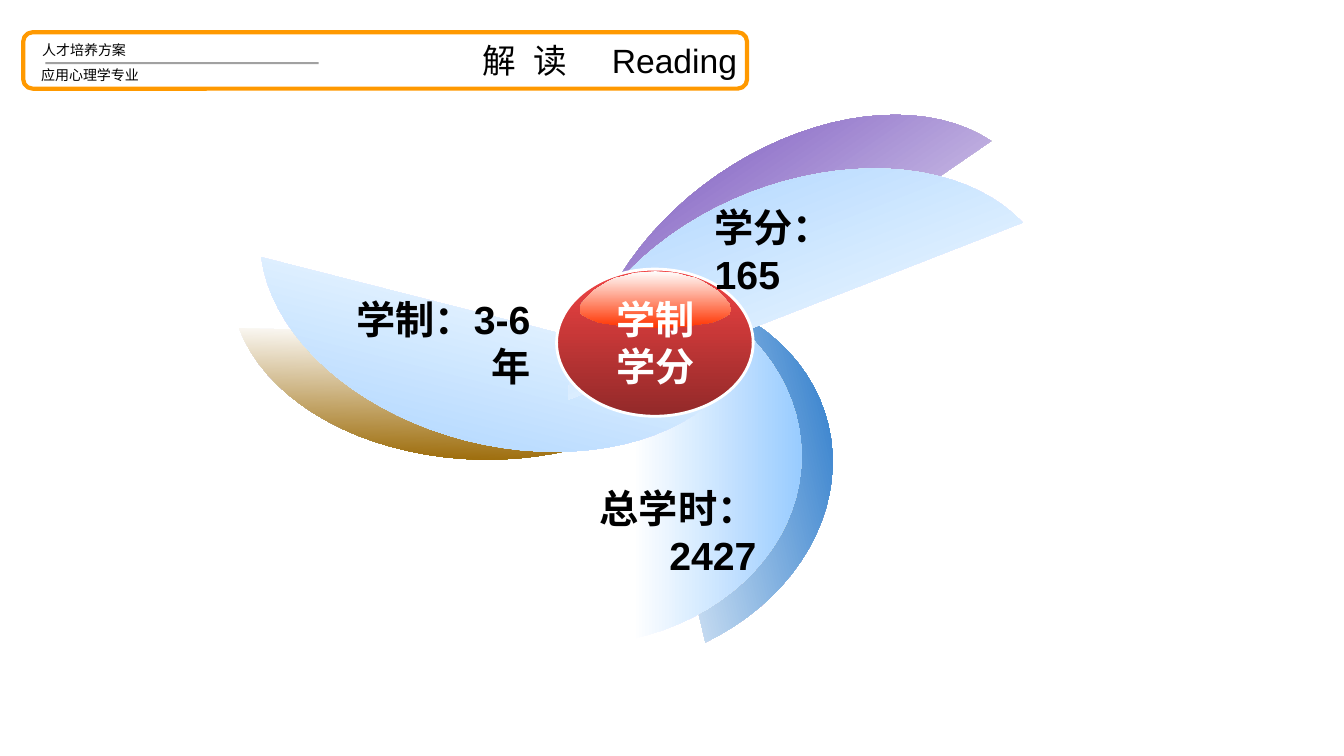
from math import acos, cos, sin
from lxml.etree import SubElement
from pptx import Presentation
from pptx.dml.color import RGBColor
from pptx.enum.shapes import MSO_CONNECTOR, MSO_SHAPE
from pptx.enum.text import MSO_ANCHOR, MSO_AUTO_SIZE, PP_ALIGN
from pptx.oxml.ns import qn
from pptx.util import Inches, Pt

# Content
HUE = {"white": "FFFFFF", "black": "000000", "blue": "0563C1",
       "brown": "996600", "purple": "5326AC", "sky": "99CCFF",
       "red": "F14343", "wine": "922929", "flame": "FF3300",
       "orange": "FF9900"}
CJK = "Noto Sans CJK SC"
# left, top, width, height, turn, colour
BLADES = [
    (6.56, 2.6, 1.68, 3.63, 346.8, "blue"),
    (4.15, 1.51, 1.26, 4.84, 91, "brown"),
    (6.85, -0.17, 1.26, 4.84, 235.5, "purple"),
    (6.27, 2.71, 1.68, 3.63, 0, "sky"),
    (4.15, 1.34, 1.26, 4.84, 104.3, "sky"),
    (7.03, 0.08, 1.26, 4.84, 248.7, "sky"),
]
# Right half of the gloss: distance from its middle line, height on slide
GLOSS = [(0, 2.69), (0.11, 2.7), (0.21, 2.71), (0.31, 2.74), (0.4, 2.76),
         (0.48, 2.8), (0.56, 2.85), (0.62, 2.89), (0.68, 2.95), (0.73, 3.01),
         (0.75, 3.05), (0.75, 3.09), (0.73, 3.12), (0.66, 3.16),
         (0.56, 3.2), (0.42, 3.22), (0.27, 3.24), (0.15, 3.25)]
# box, lines, size, bold, colour, font, align
LABELS = [
    ((5.43, 2.88, 2.14, 1.04), ["学制", "学分"], 28, True, "white", CJK, PP_ALIGN.CENTER),
    ((3.01, 2.88, 2.35, 0.57), ["学制：3-6", "年"], 28, True, "black", "Arial", PP_ALIGN.RIGHT),
    ((6.99, 1.97, 2.02, 0.57), ["学分：", "165"], 28, True, "black", "Arial", PP_ALIGN.LEFT),
    ((4.97, 4.76, 2.63, 0.57), ["总学时：", "2427"], 28, True, "black", "Arial", PP_ALIGN.RIGHT),
    ((0.32, 0.36, 3.02, 0.27), ["人才培养方案"], 10, False, "black", "Arial", PP_ALIGN.JUSTIFY),
    ((0.31, 0.61, 2.99, 0.27), ["应用心理学专业"], 10, False, "black", "Arial", PP_ALIGN.JUSTIFY),
]
# text, added letter gap in points
TITLE = [("解", 0), (" ", 6.67), ("读", 0), (" ", 26.67), ("Reading", 0)]
FRAME = (0.23, 0.32, 7.18, 0.56)

deck = Presentation()
deck.slide_width, deck.slide_height = Inches(13.33), Inches(7.5)
slide = deck.slides.add_slide(deck.slide_layouts[5])
shapes = slide.shapes


def rgb(name):
    return RGBColor.from_string(HUE[name])


def box(vals):
    return [Inches(v) for v in vals]


def blend(shape, first, last, angle=0):
    shape.shadow.inherit = False
    shape.fill.gradient()
    shape.fill.gradient_angle = angle
    for stop, name in zip(shape.fill.gradient_stops, (first, last)):
        stop.color.rgb = rgb(name)


def outline(points):
    spots = [(Inches(x), Inches(y)) for x, y in points]
    pen = shapes.build_freeform(*spots[0], scale=1.0)
    pen.add_line_segments(spots[1:], close=True)
    shape = pen.convert_to_shape()
    shape.line.fill.background()
    return shape


def write(par, text, size, bold, color, font):
    run = par.add_run()
    run.text = text
    run.font.size, run.font.bold = Pt(size), bold
    run.font.color.rgb = rgb(color)
    run.font.name = font
    props = run.font._element
    SubElement(props, qn("a:ea")).set("typeface", CJK)
    return props


# Blades: one arc of an ellipse, stretched to each box and turned
span = acos(0.263)
steps = 18
arc = []
for i in range(-steps, steps + 1):
    t = span * i / steps
    arc.append(((cos(t) - cos(span)) / (1 - cos(span)),
                0.5 + sin(t) / sin(span) / 2))
for left, top, wide, high, turn, color in BLADES:
    blade = outline([(left + x * wide, top + y * high) for x, y in arc])
    blade.rotation = turn
    blend(blade, "white", color)

# Hub and its gloss
hub = shapes.add_shape(MSO_SHAPE.OVAL, *box((5.52, 2.67, 1.95, 1.46)))
blend(hub, "red", "wine", 270)
hub.line.color.rgb = rgb("white")
hub.line.width = Pt(2)
mid = 6.5
gloss = outline([(mid + x, y) for x, y in GLOSS]
                + [(mid - x, y) for x, y in GLOSS[:0:-1]])
blend(gloss, "white", "flame", 270)

# Header frame and title
frame = shapes.add_shape(MSO_SHAPE.ROUNDED_RECTANGLE, *box(FRAME))
frame.shadow.inherit = False
frame.fill.background()
frame.line.color.rgb = rgb("orange")
frame.line.width = Pt(3)
title = shapes.title
title.left, title.top, title.width, title.height = box(FRAME)
body = title.text_frame
body.auto_size = MSO_AUTO_SIZE.NONE
body.vertical_anchor = MSO_ANCHOR.MIDDLE
par = body.paragraphs[0]
par.alignment = PP_ALIGN.RIGHT
for text, gap in TITLE:
    props = write(par, text, 24, False, "black", "Arial")
    if gap:
        props.set("spc", str(round(gap * 100)))

# Labels
for place, lines, size, bold, color, font, align in LABELS:
    body = shapes.add_textbox(*box(place)).text_frame
    body.word_wrap = True
    par = body.paragraphs[0]
    par.alignment = align
    for i, text in enumerate(lines):
        if i:
            par.add_line_break()
        write(par, text, size, bold, color, font)

# Header rule: white line with a soft black shadow below
rule = shapes.add_connector(MSO_CONNECTOR.STRAIGHT, *box((0.45, 0.6, 3.16, 0.6)))
rule.line.color.rgb = rgb("white")
rule.line.width = Pt(2)
glow = SubElement(rule._element.spPr, qn("a:effectLst"))
shade = SubElement(glow, qn("a:outerShdw"), blurRad="0",
                   dist=str(Pt(1.6)), dir="5400000", rotWithShape="0")
tint = SubElement(shade, qn("a:srgbClr"), val=HUE["black"])
SubElement(tint, qn("a:alpha"), val="36000")

deck.save("out.pptx")
